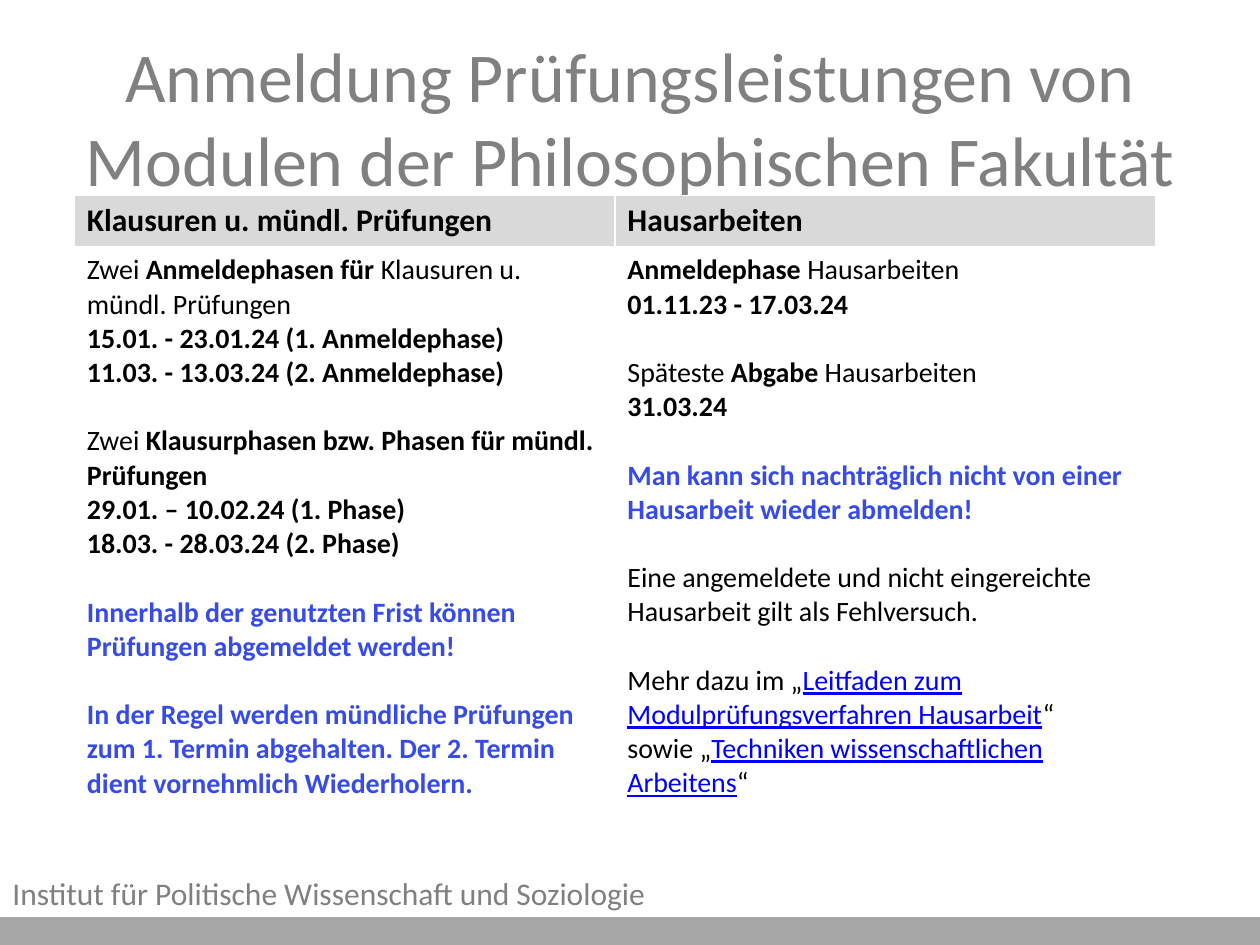
from pptx import Presentation
from pptx.dml.color import RGBColor
from pptx.enum.shapes import MSO_SHAPE
from pptx.enum.text import MSO_ANCHOR, PP_ALIGN
from pptx.util import Inches, Pt

RECTANGLE = MSO_SHAPE.RECTANGLE
MIDDLE = MSO_ANCHOR.MIDDLE
CENTER = PP_ALIGN.CENTER

GREY = RGBColor(0x80, 0x80, 0x80)
BAR_GREY = RGBColor(0xA6, 0xA6, 0xA6)
HEADER_GREY = RGBColor(0xD9, 0xD9, 0xD9)
BLACK = RGBColor(0, 0, 0)
BLUE = RGBColor(0x36, 0x4B, 0xEA)
LINK_BLUE = RGBColor(0, 0, 0xFF)

FONT = "Calibri"
GROUP_GAP = Pt(19.5)

PLAIN = {}
BOLD = {"bold": True}
NOTICE = {"bold": True, "color": BLUE}
LINK = {"color": LINK_BLUE, "underline": True}

HEADERS = ["Klausuren u. mündl. Prüfungen", "Hausarbeiten"]

# Column > group > paragraph > (text, style)
EXAMS = [
    [
        [("Zwei ", PLAIN), ("Anmeldephasen für ", BOLD), ("Klausuren u. mündl. Prüfungen", PLAIN)],
        [("15.01. - 23.01.24 (1. Anmeldephase)", BOLD)],
        [("11.03. - 13.03.24 (2. Anmeldephase)", BOLD)],
    ],
    [
        [("Zwei ", PLAIN), ("Klausurphasen bzw. Phasen für mündl. Prüfungen", BOLD)],
        [("29.01. – 10.02.24 (1. Phase)", BOLD)],
        [("18.03. - 28.03.24 (2. Phase)", BOLD)],
    ],
    [[("Innerhalb der genutzten Frist können Prüfungen abgemeldet werden!", NOTICE)]],
    [[("In der Regel werden mündliche Prüfungen zum 1. Termin abgehalten. "
       "Der 2. Termin dient vornehmlich Wiederholern.", NOTICE)]],
]
PAPERS = [
    [
        [("Anmeldephase", BOLD), (" Hausarbeiten", PLAIN)],
        [("01.11.23 - 17.03.24", BOLD)],
    ],
    [
        [("Späteste ", PLAIN), ("Abgabe", BOLD), (" Hausarbeiten", PLAIN)],
        [("31.03.24", BOLD)],
    ],
    [[("Man kann sich nachträglich nicht von einer Hausarbeit wieder abmelden!", NOTICE)]],
    [[("Eine angemeldete und nicht eingereichte Hausarbeit gilt als Fehlversuch.", PLAIN)]],
    [[
        ("Mehr dazu im „", PLAIN),
        ("Leitfaden zum Modulprüfungsverfahren Hausarbeit", LINK),
        ("“\nsowie „", PLAIN),
        ("Techniken wissenschaftlichen Arbeitens", LINK),
        ("“", PLAIN),
    ]],
]


def style_font(font, size=None, color=BLACK, bold=False, underline=None):
    """Apply size, colour and emphasis to a font."""
    font.name = FONT
    if size:
        font.size = Pt(size)
    font.color.rgb = color
    font.bold = bold
    if underline:
        font.underline = True


def add_footer(slide):
    """Add the grey bar and the institute name above it."""
    bar = slide.shapes.add_shape(RECTANGLE, Inches(0), Inches(7.29), Inches(10), Inches(0.21))
    bar.shadow.inherit = False
    bar.fill.solid()
    bar.fill.fore_color.rgb = BAR_GREY
    bar.line.color.rgb = BAR_GREY
    bar.line.width = Pt(2)
    institute = slide.shapes.add_textbox(Inches(0), Inches(6.89), Inches(7.09), Inches(0.4))
    institute.text_frame.word_wrap = True
    paragraph = institute.text_frame.paragraphs[0]
    paragraph.text = "Institut für Politische Wissenschaft und Soziologie"
    style_font(paragraph.font, 18, GREY)


def set_title(slide):
    """Place and format the slide title."""
    title = slide.shapes.title
    title.left, title.top = Inches(0.5), Inches(0.3)
    title.width, title.height = Inches(9), Inches(1.25)
    title.text_frame.vertical_anchor = MIDDLE
    paragraph = title.text_frame.paragraphs[0]
    paragraph.text = "Anmeldung Prüfungsleistungen von Modulen der Philosophischen Fakultät"
    paragraph.alignment = CENTER
    style_font(paragraph.font, 40, GREY)


def add_styled_text(paragraph, text, style):
    """Add a run per line of text, with line breaks between them."""
    for number, line in enumerate(text.split("\n")):
        if number:
            paragraph.add_line_break()
        run = paragraph.add_run()
        run.text = line
        style_font(run.font, **style)


def fill_header(cell, heading):
    """Write a column heading on grey."""
    cell.fill.solid()
    cell.fill.fore_color.rgb = HEADER_GREY
    paragraph = cell.text_frame.paragraphs[0]
    paragraph.text = heading
    style_font(paragraph.font, 18, bold=True)


def fill_body(cell, groups):
    """Write groups of paragraphs with a line's gap between groups."""
    cell.fill.background()
    paragraph = None
    for group in groups:
        for position, pieces in enumerate(group):
            is_first = paragraph is None
            paragraph = cell.text_frame.paragraphs[0] if is_first else cell.text_frame.add_paragraph()
            if position == 0 and not is_first:
                paragraph.space_before = GROUP_GAP
            if len(pieces) == 1:
                text, style = pieces[0]
                paragraph.text = text
                style_font(paragraph.font, 16, **style)
                continue
            paragraph.font.size = Pt(16)
            for text, style in pieces:
                add_styled_text(paragraph, text, style)


def add_dates_table(slide):
    """Add the two-column table of registration dates."""
    header_height, body_height = Inches(0.41), Inches(4.96)
    table = slide.shapes.add_table(
        2, 2, Inches(0.59), Inches(1.55), Inches(8.58), header_height + body_height
    ).table
    table.horz_banding = False
    table.rows[0].height = header_height
    table.rows[1].height = body_height
    for column, (heading, groups) in enumerate(zip(HEADERS, [EXAMS, PAPERS])):
        fill_header(table.cell(0, column), heading)
        fill_body(table.cell(1, column), groups)


def main():
    """Build and save the slide."""
    presentation = Presentation()
    presentation.slide_width = Inches(10)
    presentation.slide_height = Inches(7.5)
    slide = presentation.slides.add_slide(presentation.slide_layouts[5])
    add_footer(slide)
    set_title(slide)
    add_dates_table(slide)
    presentation.save("out.pptx")


if __name__ == "__main__":
    main()
